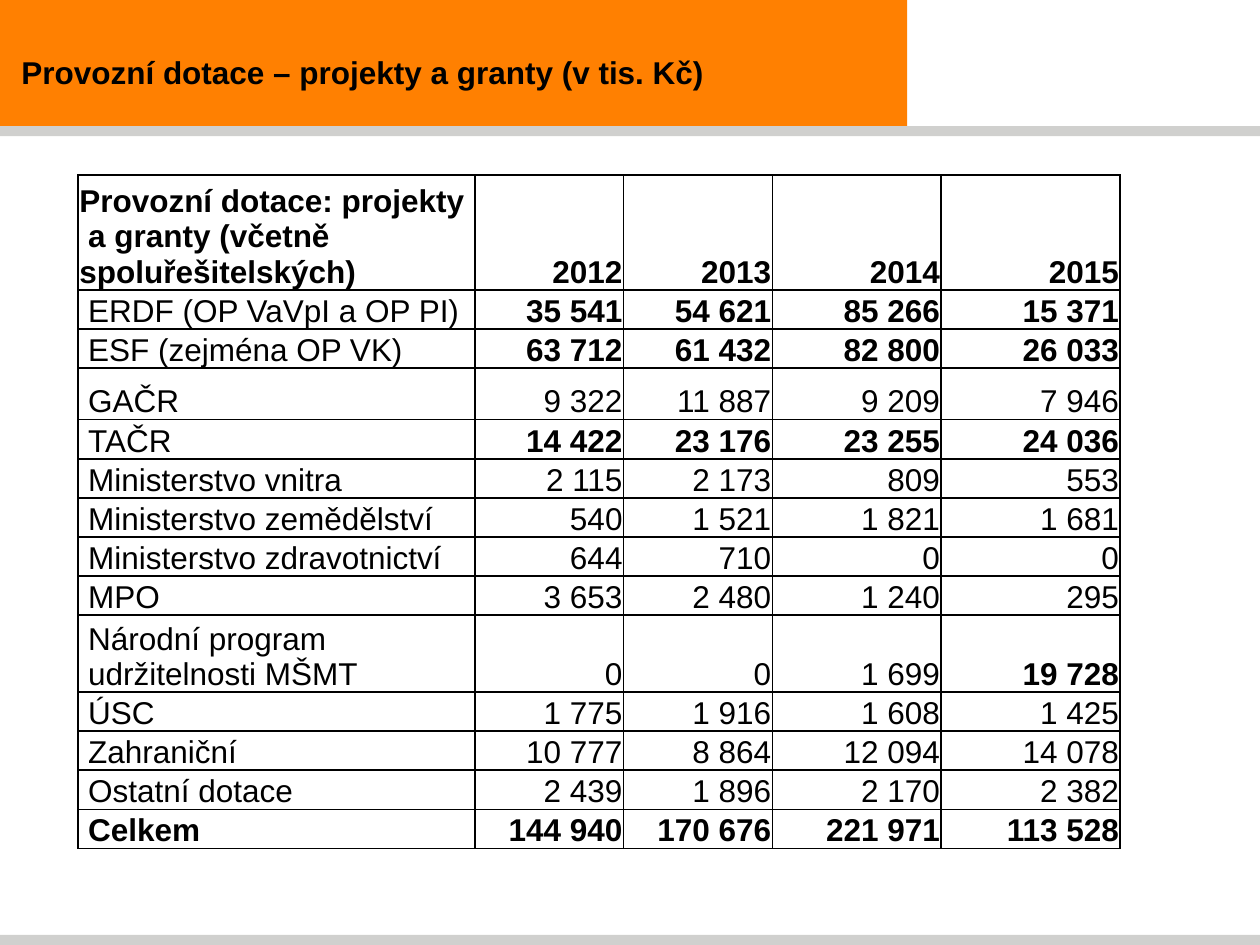
from dataclasses import dataclass

from lxml import etree
from pptx import Presentation
from pptx.dml.color import RGBColor
from pptx.enum import shapes, text
from pptx.oxml import ns
from pptx.util import Inches, Pt

ORANGE = RGBColor(0xFF, 0x80, 0x01)
GREY = RGBColor(0xD0, 0xD0, 0xCE)
BLACK = RGBColor(0x00, 0x00, 0x00)
FONT = "Arial"
FONT_SIZE = 18
LINE_HEIGHT = 0.31
VALUES = (1, 2, 3, 4)
ALL = (0, *VALUES)
COLUMN_WIDTHS = (3.15, 1.18, 1.18, 1.34, 1.42)


@dataclass(frozen=True)
class Bar:
    top: float
    width: float
    height: float
    color: RGBColor


@dataclass(frozen=True)
class GrantRow:
    label: str
    values: tuple[str, ...]
    bold: tuple[int, ...] = ()
    height: float = LINE_HEIGHT
    indent: float = 0.08


BARS = (
    Bar(0, 7.2, 1, ORANGE),
    Bar(7.42, 10, 0.08, GREY),
    Bar(1, 10, 0.08, GREY),
)

ROWS = (
    GrantRow(
        "Provozní dotace: projekty\v a granty (včetně\nspoluřešitelských)",
        ("2012", "2013", "2014", "2015"), ALL, 0.91, 0.01,
    ),
    GrantRow("ERDF (OP VaVpI a OP PI)", ("35 541", "54 621", "85 266", "15 371"), VALUES),
    GrantRow("ESF (zejména OP VK)", ("63 712", "61 432", "82 800", "26 033"), VALUES),
    GrantRow("GAČR", ("9 322", "11 887", "9 209", "7 946"), height=0.41),
    GrantRow("TAČR", ("14 422", "23 176", "23 255", "24 036"), VALUES),
    GrantRow("Ministerstvo vnitra", ("2 115", "2 173", "809", "553")),
    GrantRow("Ministerstvo zemědělství", ("540", "1 521", "1 821", "1 681")),
    GrantRow("Ministerstvo zdravotnictví", ("644", "710", "0", "0")),
    GrantRow("MPO", ("3 653", "2 480", "1 240", "295")),
    GrantRow("Národní program\nudržitelnosti MŠMT", ("0", "0", "1 699", "19 728"), (4,), 0.61),
    GrantRow("ÚSC", ("1 775", "1 916", "1 608", "1 425")),
    GrantRow("Zahraniční", ("10 777", "8 864", "12 094", "14 078")),
    GrantRow("Ostatní dotace", ("2 439", "1 896", "2 170", "2 382")),
    GrantRow("Celkem", ("144 940", "170 676", "221 971", "113 528"), ALL),
)


def format_text(tf, align, bold: bool) -> None:
    for p in tf.paragraphs:
        p.alignment = align
        for r in p.runs:
            r.font.name = FONT
            r.font.size = Pt(FONT_SIZE)
            r.font.bold = bold
            r.font.color.rgb = BLACK


def add_title(s):
    title = s.shapes.title
    title.left, title.top = Inches(0.07), Inches(0.37)
    title.width, title.height = Inches(6.79), Inches(0.4)
    tf = title.text_frame
    tf.text = "Provozní dotace – projekty a granty (v tis. Kč)"
    tf.word_wrap = True
    tf.auto_size = text.MSO_AUTO_SIZE.SHAPE_TO_FIT_TEXT
    tf.vertical_anchor = text.MSO_ANCHOR.TOP
    format_text(tf, text.PP_ALIGN.LEFT, True)
    return title


def add_bar(s, bar: Bar, title) -> None:
    sp = s.shapes.add_shape(
        shapes.MSO_SHAPE.RECTANGLE,
        0, Inches(bar.top), Inches(bar.width), Inches(bar.height),
    )
    sp.shadow.inherit = False
    sp.fill.solid()
    sp.fill.fore_color.rgb = bar.color
    sp.line.fill.background()
    title.element.addprevious(sp._element)


def add_borders(cell) -> None:
    properties = cell._tc.get_or_add_tcPr()
    for side in ("lnL", "lnR", "lnT", "lnB"):
        line = etree.SubElement(properties, ns.qn(f"a:{side}"), w=str(Pt(1)))
        fill = etree.SubElement(line, ns.qn("a:solidFill"))
        etree.SubElement(fill, ns.qn("a:srgbClr"), val=str(BLACK))


def fill_cell(cell, content: str, align, bold: bool, indent: float) -> None:
    cell.text = content
    cell.vertical_anchor = text.MSO_ANCHOR.BOTTOM
    cell.margin_left = Inches(indent)
    cell.margin_right = cell.margin_top = Inches(0.01)
    cell.margin_bottom = 0
    add_borders(cell)
    cell.fill.background()
    format_text(cell.text_frame, align, bold)


def add_grants_table(s) -> None:
    frame = s.shapes.add_table(
        len(ROWS), len(COLUMN_WIDTHS), Inches(0.62), Inches(1.39),
        Inches(sum(COLUMN_WIDTHS)), Inches(sum(row.height for row in ROWS)),
    )
    table = frame.table
    table.first_row = table.horz_banding = False
    for column, width in zip(table.columns, COLUMN_WIDTHS):
        column.width = Inches(width)
    for i, row in enumerate(ROWS):
        table.rows[i].height = Inches(row.height)
        for j, content in enumerate((row.label, *row.values)):
            align = text.PP_ALIGN.RIGHT if j else text.PP_ALIGN.LEFT
            indent = 0.01 if j else row.indent
            fill_cell(table.cell(i, j), content, align, j in row.bold, indent)


def main() -> None:
    prs = Presentation()
    prs.slide_width, prs.slide_height = Inches(10), Inches(7.5)
    s = prs.slides.add_slide(prs.slide_layouts[5])
    title = add_title(s)
    for bar in BARS:
        add_bar(s, bar, title)
    add_grants_table(s)
    prs.save("out.pptx")


if __name__ == "__main__":
    main()
